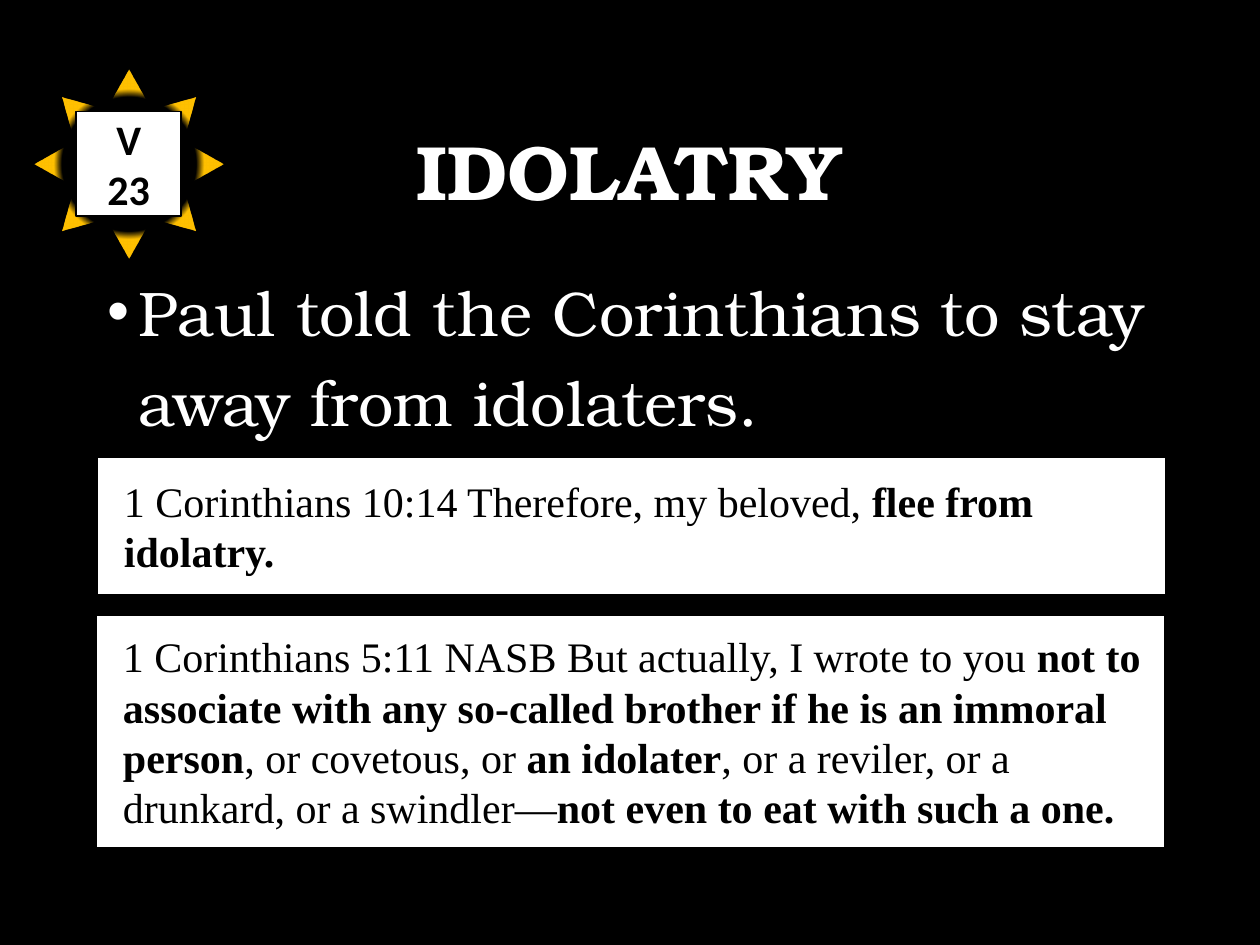
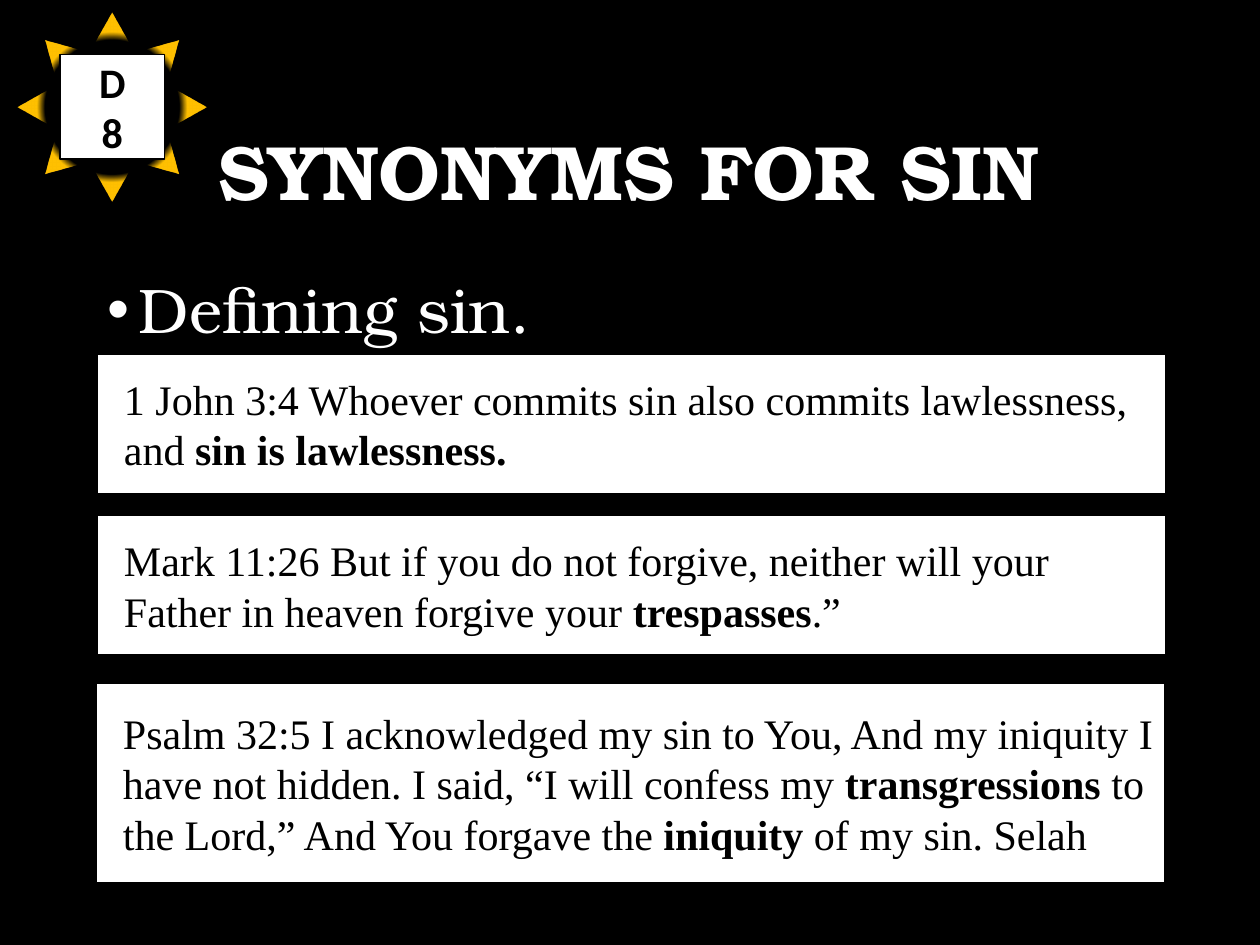
from lxml import etree
from pptx import Presentation
from pptx import util as u
from pptx.dml.color import RGBColor
from pptx.enum import shapes, text
from pptx.oxml import ns

BLACK = RGBColor(0x00, 0x00, 0x00)
WHITE = RGBColor(0xFF, 0xFF, 0xFF)
YELLOW = RGBColor(0xFF, 0xFF, 0x00)
GOLD = RGBColor(0xFF, 0xC0, 0x00)

DISPLAY_FONT = "TeX Gyre Bonum"
VERSE_FONT = "Times New Roman"
BADGE_FONT = "Calibri"

MARGIN = u.Cm(1.91)
TEXT_WIDTH = u.Cm(21.56)
VERSE_WIDTH = u.Cm(21.59)
SUN_SIZE = u.Cm(3.81)
BADGE_SIZE = u.Cm(2.11)


def add_run(paragraph, words, font_name, size, color, bold=False):
    run = paragraph.add_run()
    run.text = words
    font = run.font
    font.name, font.size, font.bold = font_name, u.Pt(size), bold
    font.color.rgb = color


def add_text_box(slide, top, height, anchor):
    frame = slide.shapes.add_textbox(MARGIN, top, TEXT_WIDTH, height).text_frame
    frame.word_wrap = True
    frame.vertical_anchor = anchor
    return frame.paragraphs[0]


def add_title(slide, words):
    paragraph = add_text_box(slide, u.Cm(1.7), u.Cm(3.68), text.MSO_ANCHOR.MIDDLE)
    paragraph.alignment = text.PP_ALIGN.CENTER
    paragraph.line_spacing = 0.9
    add_run(paragraph, words, DISPLAY_FONT, 44, WHITE, bold=True)


def add_bullet_point(slide, top, height, words):
    paragraph = add_text_box(slide, top, height, text.MSO_ANCHOR.TOP)
    paragraph.line_spacing = 1.2
    properties = paragraph._p.get_or_add_pPr()
    properties.set("marL", str(u.Cm(0.64)))
    properties.set("indent", str(-u.Cm(0.64)))
    bullet_font = etree.SubElement(properties, ns.qn("a:buFont"))
    bullet_font.set("typeface", "Arial")
    etree.SubElement(properties, ns.qn("a:buChar")).set("char", "•")
    add_run(paragraph, words, DISPLAY_FONT, 36, WHITE)


def add_white_box(slide, left, top, width, height, line_width):
    box = slide.shapes.add_shape(shapes.MSO_SHAPE.RECTANGLE, left, top, width, height)
    box.shadow.inherit = False
    box.fill.solid()
    box.fill.fore_color.rgb = WHITE
    box.line.color.rgb = BLACK
    box.line.width = u.Pt(line_width)
    frame = box.text_frame
    frame.word_wrap = True
    frame.vertical_anchor = text.MSO_ANCHOR.MIDDLE
    return frame


def add_verse(slide, left, top, height, *phrases):
    """Add a boxed verse whose phrases alternate between regular and bold."""
    frame = add_white_box(slide, left, top, VERSE_WIDTH, height, 2.25)
    paragraph = frame.paragraphs[0]
    paragraph.alignment = text.PP_ALIGN.LEFT
    paragraph._p.get_or_add_pPr().set("marL", str(u.Cm(0.32)))
    for index, phrase in enumerate(phrases):
        add_run(paragraph, phrase, VERSE_FONT, 24, BLACK, bold=index % 2 == 1)


def fill_with_glow(shape):
    """Fade a shape from a transparent centre to gold."""
    shape.fill.background()
    properties = shape._element.spPr
    gradient = etree.Element(ns.qn("a:gradFill"))
    stops = etree.SubElement(gradient, ns.qn("a:gsLst"))
    for percent, color, opaque in ((0, YELLOW, False), (50, GOLD, False), (56, GOLD, True)):
        stop = etree.SubElement(stops, ns.qn("a:gs"), pos=str(percent * 1000))
        value = etree.SubElement(stop, ns.qn("a:srgbClr"), val=str(color))
        if not opaque:
            etree.SubElement(value, ns.qn("a:alpha"), val="0")
    circle = etree.SubElement(gradient, ns.qn("a:path"))
    circle.set("path", "circle")
    etree.SubElement(circle, ns.qn("a:fillToRect"), dict.fromkeys("ltrb", "50000"))
    properties.replace(properties.find(ns.qn("a:noFill")), gradient)


def add_sun_badge(slide, left, top, *lines):
    sun = slide.shapes.add_shape(shapes.MSO_SHAPE.SUN, left, top, SUN_SIZE, SUN_SIZE)
    sun.shadow.inherit = False
    sun.adjustments[0] = 0.188
    fill_with_glow(sun)
    sun.line.fill.background()
    inset = (SUN_SIZE - BADGE_SIZE) // 2
    frame = add_white_box(slide, left + inset, top + inset, BADGE_SIZE, BADGE_SIZE, 1)
    for index, line in enumerate(lines):
        paragraph = frame.add_paragraph() if index else frame.paragraphs[0]
        paragraph.alignment = text.PP_ALIGN.CENTER
        add_run(paragraph, line, BADGE_FONT, 24, BLACK, bold=True)


def add_black_slide(presentation, title):
    slide = presentation.slides.add_slide(presentation.slide_layouts[6])
    slide.background.fill.solid()
    slide.background.fill.fore_color.rgb = BLACK
    add_title(slide, title)
    return slide


def add_idolatry_slide(presentation):
    slide = add_black_slide(presentation, "IDOLATRY")
    add_bullet_point(slide, u.Cm(5.08), u.Cm(10.26),
                     "Paul told the Corinthians to stay away from idolaters.")
    add_verse(slide, MARGIN, u.Cm(12.37), u.Cm(4.75),
              "1 Corinthians 5:11 NASB But actually, I wrote to you ",
              "not to associate with any so-called brother if he is an immoral person",
              ", or covetous, or ", "an idolater",
              ", or a reviler, or a drunkard, or a swindler—",
              "not even to eat with such a one.")
    add_verse(slide, u.Cm(1.93), u.Cm(9.19), u.Cm(2.82),
              "1 Corinthians 10:14 Therefore, my beloved, ", "flee from idolatry.")
    add_sun_badge(slide, u.Cm(0.69), u.Cm(1.4), "V", "23")


def add_synonyms_slide(presentation):
    slide = add_black_slide(presentation, "SYNONYMS FOR SIN")
    add_bullet_point(slide, u.Cm(5.03), u.Cm(11.07), "Defining sin.")
    add_verse(slide, MARGIN, u.Cm(13.74), u.Cm(4.09),
              "Psalm 32:5 I acknowledged my sin to You, And my iniquity "
              "I have not hidden. I said, “I will confess my ",
              "transgressions", " to the Lord,” And You forgave the ",
              "iniquity", " of my sin. Selah")
    add_verse(slide, u.Cm(1.93), u.Cm(7.11), u.Cm(2.87),
              "1 John 3:4 Whoever commits sin also commits lawlessness, and ",
              "sin is lawlessness.")
    add_verse(slide, u.Cm(1.93), u.Cm(10.36), u.Cm(2.87),
              "Mark 11:26 But if you do not forgive, neither will your "
              "Father in heaven forgive your ", "trespasses", ".”")
    add_sun_badge(slide, u.Cm(0.36), u.Cm(0.25), "D", "8")


def main():
    presentation = Presentation()
    presentation.slide_width = u.Cm(25.4)
    presentation.slide_height = u.Cm(19.05)
    add_idolatry_slide(presentation)
    add_synonyms_slide(presentation)
    presentation.save("out.pptx")


if __name__ == "__main__":
    main()
